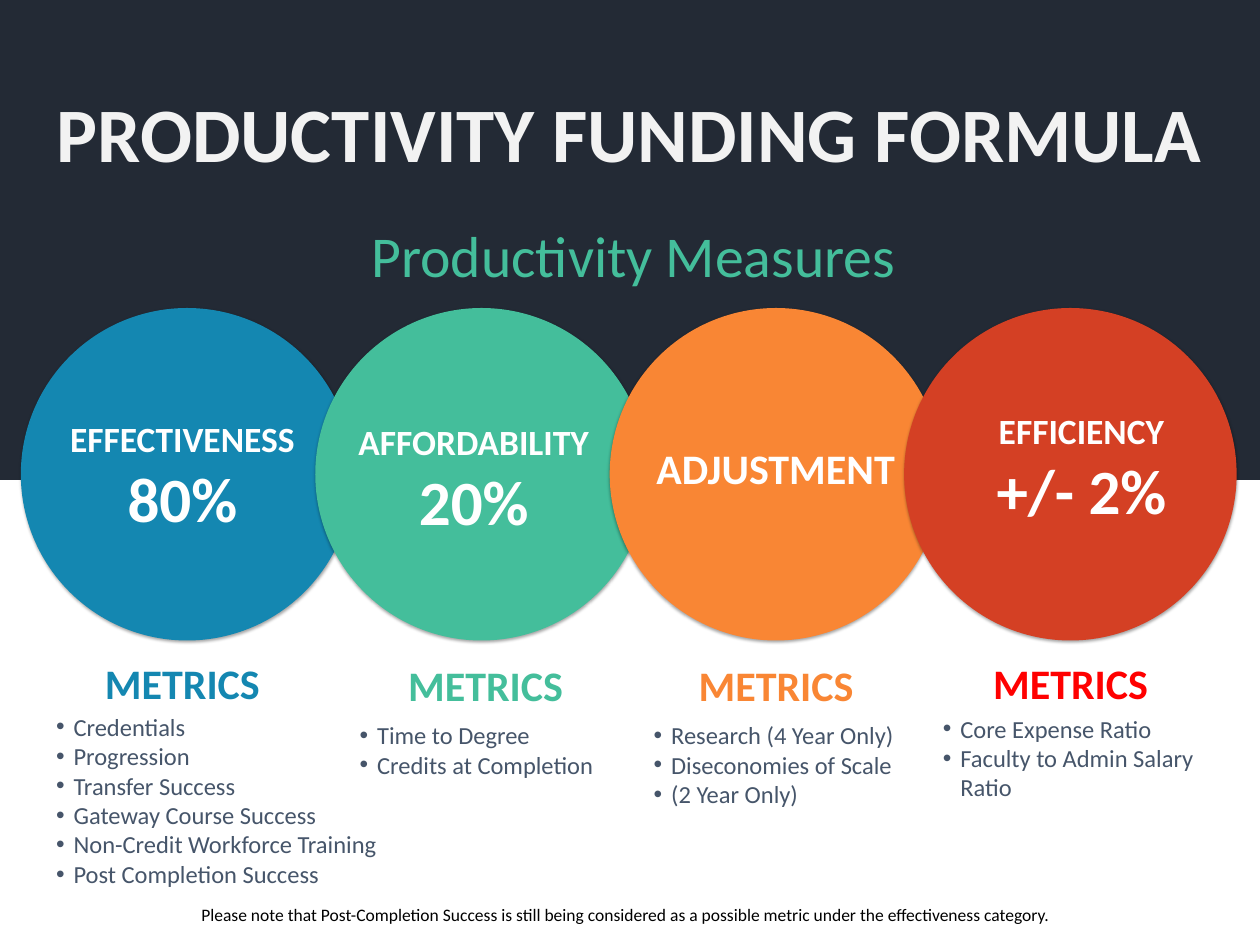
from lxml.etree import SubElement
from pptx import Presentation
from pptx.dml.color import RGBColor
from pptx.enum.shapes import MSO_SHAPE
from pptx.enum.text import MSO_ANCHOR, MSO_AUTO_SIZE, PP_ALIGN
from pptx.oxml.ns import qn
from pptx.util import Pt

COLORS = {
    "navy": "232A35", "blue": "1487B1", "green": "44BE9B", "orange": "F98634",
    "rust": "D44024", "red": "FF0000", "slate": "46556A", "pale": "F2F2F2",
    "white": "FFFFFF", "black": "000000",
}
CIRCLE_LEFT, CIRCLE_TOP, CIRCLE_SIZE, CIRCLE_STEP = 23.8, 352, 380, 336.5
MEASURES = [
    dict(fill="blue", accent="blue", label=[("EFFECTIVENESS", 40.5), ("80%", 72)],
         label_at=(57, 448), heading_at=(83.5, 758), list_at=(57, 810, 411, 211),
         metrics=["Credentials", "Progression", "Transfer Success",
                  "Gateway Course Success", "Non-Credit Workforce Training",
                  "Post Completion Success"]),
    dict(fill="green", accent="green", label=[("AFFORDABILITY", 40.5), ("20%", 72)],
         label_at=(390, 451.5), heading_at=(430, 759.5), list_at=(404, 819.5, 307, 75),
         metrics=["Time to Degree", "Credits at Completion"]),
    dict(fill="orange", accent="orange", label=[("ADJUSTMENT", 48)],
         label_at=(735, 439), heading_at=(762, 759.5), list_at=(740, 819.5, 309, 109),
         metrics=["Research (4 Year Only)", "Diseconomies of Scale", "(2 Year Only)"]),
    dict(fill="rust", accent="red", label=[("EFFICIENCY", 40.5), ("+/- 2%", 72)],
         label_at=(1084.5, 439), heading_at=(1098.5, 758), list_at=(1070.5, 812, 307, 109),
         metrics=["Core Expense Ratio", "Faculty to Admin Salary Ratio"]),
]


def write_text(para, text, size, color, bold=False, align=PP_ALIGN.LEFT, bullet=False):
    para.alignment = align
    span = para.add_run()
    span.text = text
    span.font.name = "Calibri"
    span.font.size = Pt(size)
    span.font.bold = bold
    span.font.color.rgb = RGBColor.from_string(COLORS[color])
    if bullet:
        properties = para._p.get_or_add_pPr()
        properties.set("marL", str(Pt(20)))
        properties.set("indent", str(Pt(-20)))
        SubElement(properties, qn("a:buFont"), typeface="Arial")
        SubElement(properties, qn("a:buChar"), char="•")


class Page:
    """Draws styled elements on one slide, with all lengths in points."""

    def __init__(self, deck):
        self.slide = deck.slides.add_slide(deck.slide_layouts[6])

    def shape(self, kind, left, top, width, height, fill):
        shape = self.slide.shapes.add_shape(kind, Pt(left), Pt(top), Pt(width), Pt(height))
        shape.shadow.inherit = False
        shape.fill.solid()
        shape.fill.fore_color.rgb = RGBColor.from_string(COLORS[fill])
        shape.line.fill.background()
        return shape

    def circle(self, left, top, size, fill):
        circle = self.shape(MSO_SHAPE.OVAL, left, top, size, size, fill)
        effects = circle._element.spPr.find(qn("a:effectLst"))
        shadow = SubElement(effects, qn("a:outerShdw"), blurRad=str(Pt(3.1)),
                            dist=str(Pt(1.8)), dir="5400000", rotWithShape="0")
        tint = SubElement(shadow, qn("a:srgbClr"), val=COLORS["black"])
        SubElement(tint, qn("a:alpha"), val="35000")

    def text_box(self, left, top, width, height, lines, **style):
        box = self.slide.shapes.add_textbox(Pt(left), Pt(top), Pt(width), Pt(height))
        frame = box.text_frame
        frame.word_wrap = True
        for index, (text, size) in enumerate(lines):
            para = frame.add_paragraph() if index else frame.paragraphs[0]
            write_text(para, text, size, **style)
        return frame

    def label(self, left, top, width, height, lines, color, bold=True):
        frame = self.text_box(left, top, width, height, lines, color=color,
                              bold=bold, align=PP_ALIGN.CENTER)
        frame.vertical_anchor = MSO_ANCHOR.MIDDLE
        frame.margin_left = frame.margin_right = 0
        frame.margin_top = frame.margin_bottom = Pt(8)

    def body(self, left, top, width, height, lines, color, bullet=False):
        frame = self.text_box(left, top, width, height, lines, color=color, bullet=bullet)
        frame.auto_size = MSO_AUTO_SIZE.SHAPE_TO_FIT_TEXT


def main():
    deck = Presentation()
    deck.slide_width, deck.slide_height = Pt(1440), Pt(1080)
    page = Page(deck)
    page.shape(MSO_SHAPE.RECTANGLE, 0, 0, 1440, 548.5, "navy")
    for index, measure in enumerate(MEASURES):
        page.circle(CIRCLE_LEFT + index * CIRCLE_STEP, CIRCLE_TOP, CIRCLE_SIZE, measure["fill"])
    page.label(24, 40, 1390, 220, [("PRODUCTIVITY FUNDING FORMULA", 88)], "pale")
    page.label(91, 244, 1266, 93, [("Productivity Measures", 66)], "green", bold=False)
    for measure in MEASURES:
        page.label(*measure["label_at"], 303, 192, measure["label"], "white")
        page.label(*measure["heading_at"], 250, 45, [("METRICS", 48)], measure["accent"])
        page.body(*measure["list_at"], [(metric, 28) for metric in measure["metrics"]],
                  "slate", bullet=True)
    note = ("Please note that Post-Completion Success is still being considered "
            "as a possible metric under the effectiveness category.")
    page.body(223, 1030, 991, 32, [(note, 20)], "black")
    deck.save("out.pptx")


if __name__ == "__main__":
    main()
